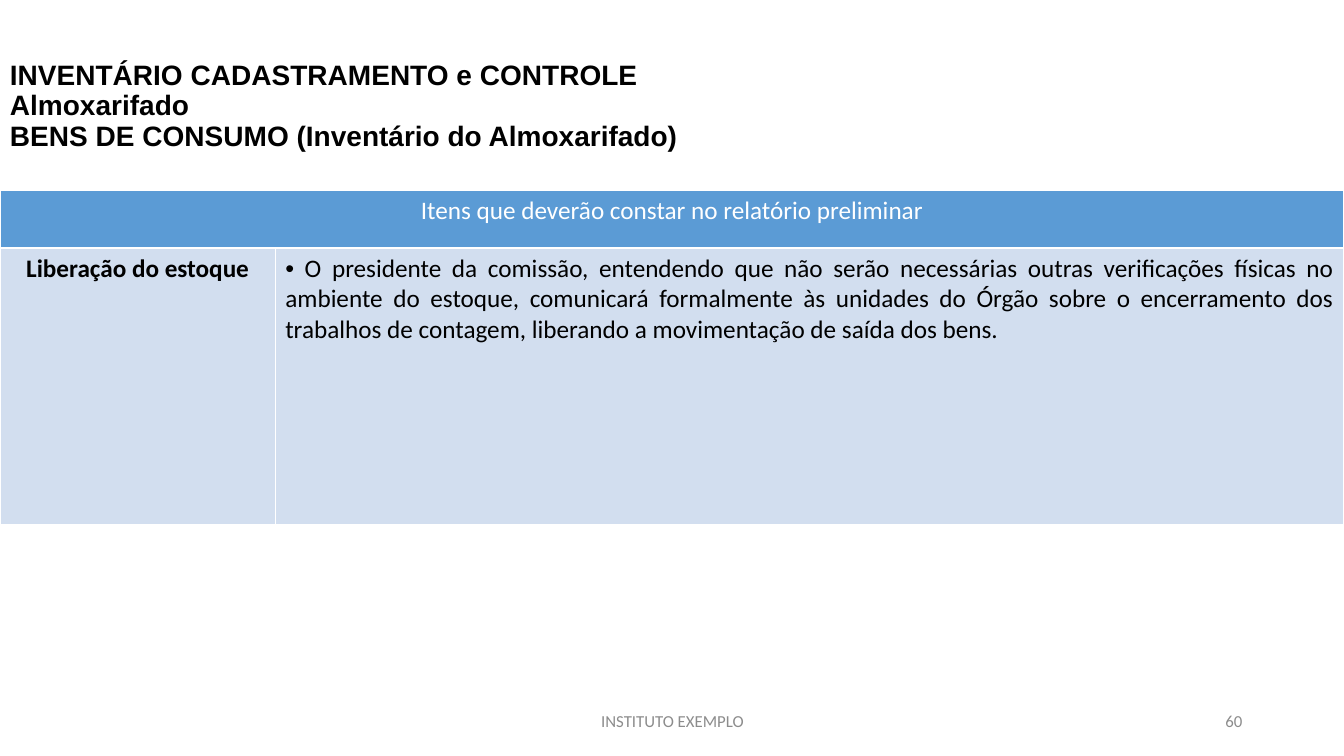
from dataclasses import dataclass

from lxml import etree
from pptx import Presentation
from pptx.dml.color import RGBColor
from pptx.enum.text import MSO_ANCHOR, PP_ALIGN
from pptx.oxml.ns import qn
from pptx.slide import Slide
from pptx.table import Table, _Cell
from pptx.text.text import _Paragraph
from pptx.util import Inches, Pt

LEFT, CENTER = PP_ALIGN.LEFT, PP_ALIGN.CENTER
RIGHT, JUSTIFY = PP_ALIGN.RIGHT, PP_ALIGN.JUSTIFY
MIDDLE = MSO_ANCHOR.MIDDLE

BLACK = RGBColor(0x00, 0x00, 0x00)
WHITE = RGBColor(0xFF, 0xFF, 0xFF)
GRAY = RGBColor(0x8C, 0x8C, 0x8C)
HEADER_BLUE = RGBColor(0x5B, 0x9B, 0xD5)
BODY_BLUE = RGBColor(0xD2, 0xDE, 0xEF)

SLIDE_WIDTH, SLIDE_HEIGHT = 13.33, 7.5
COLUMN_WIDTHS = (2.73, 10.6)
ROW_HEIGHTS = (0.57, 2.74)


@dataclass(frozen=True)
class TextStyle:
    size: float
    color: RGBColor
    font: str = "Calibri"
    bold: bool = False
    align: PP_ALIGN = LEFT
    line_spacing: float = 1.0


@dataclass(frozen=True)
class Label:
    lines: tuple[str, ...]
    left: float
    top: float
    width: float
    height: float
    style: TextStyle


@dataclass(frozen=True)
class CellContent:
    row: int
    column: int
    text: str
    fill: RGBColor
    style: TextStyle
    bullet: bool = False


LABELS = (
    Label(
        (
            "INVENTÁRIO CADASTRAMENTO e CONTROLE",
            "Almoxarifado",
            "BENS DE CONSUMO (Inventário do Almoxarifado)",
        ),
        0, 0.77, 12.52, 0.58,
        TextStyle(20, BLACK, "Arial", bold=True, line_spacing=0.9),
    ),
    Label(("INSTITUTO EXEMPLO",), 4.42, 6.95, 4.5, 0.4,
          TextStyle(12, GRAY, align=CENTER)),
    Label(("60",), 9.42, 6.95, 3, 0.4, TextStyle(12, GRAY, align=RIGHT)),
)

CELLS = (
    CellContent(0, 0, "Itens que deverão constar no relatório preliminar",
                HEADER_BLUE, TextStyle(18, WHITE, align=CENTER)),
    CellContent(1, 0, "Liberação do estoque", BODY_BLUE,
                TextStyle(18, BLACK, bold=True, align=CENTER)),
    CellContent(
        1, 1,
        " O presidente da comissão, entendendo que não serão necessárias "
        "outras verificações físicas no ambiente do estoque, comunicará "
        "formalmente às unidades do Órgão sobre o encerramento dos trabalhos "
        "de contagem, liberando a movimentação de saída dos bens.",
        BODY_BLUE, TextStyle(18, BLACK, align=JUSTIFY), bullet=True,
    ),
)


def write_lines(paragraph: _Paragraph, lines: tuple[str, ...],
                style: TextStyle) -> None:
    paragraph.alignment = style.align
    paragraph.line_spacing = style.line_spacing
    for index, line in enumerate(lines):
        if index:
            paragraph.add_line_break()
        run = paragraph.add_run()
        run.text = line
        run.font.name = style.font
        run.font.size = Pt(style.size)
        run.font.bold = style.bold
        run.font.color.rgb = style.color


def add_label(slide: Slide, label: Label) -> None:
    box = slide.shapes.add_textbox(Inches(label.left), Inches(label.top),
                                   Inches(label.width), Inches(label.height))
    frame = box.text_frame
    frame.word_wrap = True
    frame.vertical_anchor = MIDDLE
    write_lines(frame.paragraphs[0], label.lines, label.style)


def add_bullet(paragraph: _Paragraph) -> None:
    properties = paragraph._p.get_or_add_pPr()
    properties.set("marL", "0")
    properties.set("indent", "0")
    etree.SubElement(properties, qn("a:buFont"), typeface="Arial")
    etree.SubElement(properties, qn("a:buChar"), char="•")


def add_borders(cell: _Cell) -> None:
    properties = cell._tc.get_or_add_tcPr()
    for side in ("L", "R", "T", "B"):
        line = etree.SubElement(properties, qn(f"a:ln{side}"), w=str(Pt(1)))
        fill = etree.SubElement(line, qn("a:solidFill"))
        etree.SubElement(fill, qn("a:srgbClr"), val=str(WHITE))


def fill_cell(table: Table, content: CellContent) -> None:
    cell = table.cell(content.row, content.column)
    add_borders(cell)
    cell.fill.solid()
    cell.fill.fore_color.rgb = content.fill
    paragraph = cell.text_frame.paragraphs[0]
    if content.bullet:
        add_bullet(paragraph)
    write_lines(paragraph, (content.text,), content.style)


def add_report_table(slide: Slide) -> None:
    table = slide.shapes.add_table(
        len(ROW_HEIGHTS), len(COLUMN_WIDTHS), Inches(0), Inches(1.89),
        Inches(sum(COLUMN_WIDTHS)), Inches(sum(ROW_HEIGHTS)),
    ).table
    for column, width in zip(table.columns, COLUMN_WIDTHS):
        column.width = Inches(width)
    for row, height in zip(table.rows, ROW_HEIGHTS):
        row.height = Inches(height)
    table.cell(0, 0).merge(table.cell(0, 1))
    for content in CELLS:
        fill_cell(table, content)


def main() -> None:
    presentation = Presentation()
    presentation.slide_width = Inches(SLIDE_WIDTH)
    presentation.slide_height = Inches(SLIDE_HEIGHT)
    slide = presentation.slides.add_slide(presentation.slide_layouts[6])
    for label in LABELS:
        add_label(slide, label)
    add_report_table(slide)
    presentation.save("out.pptx")


if __name__ == "__main__":
    main()
